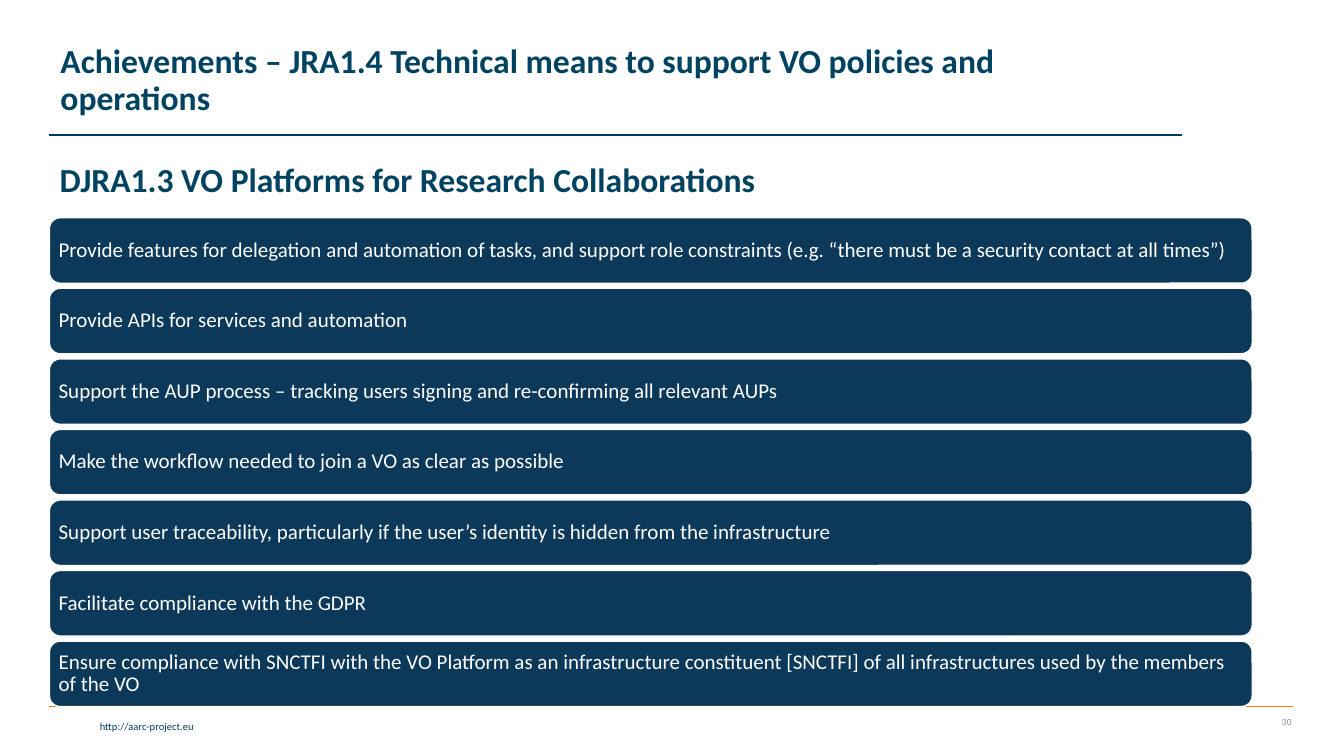
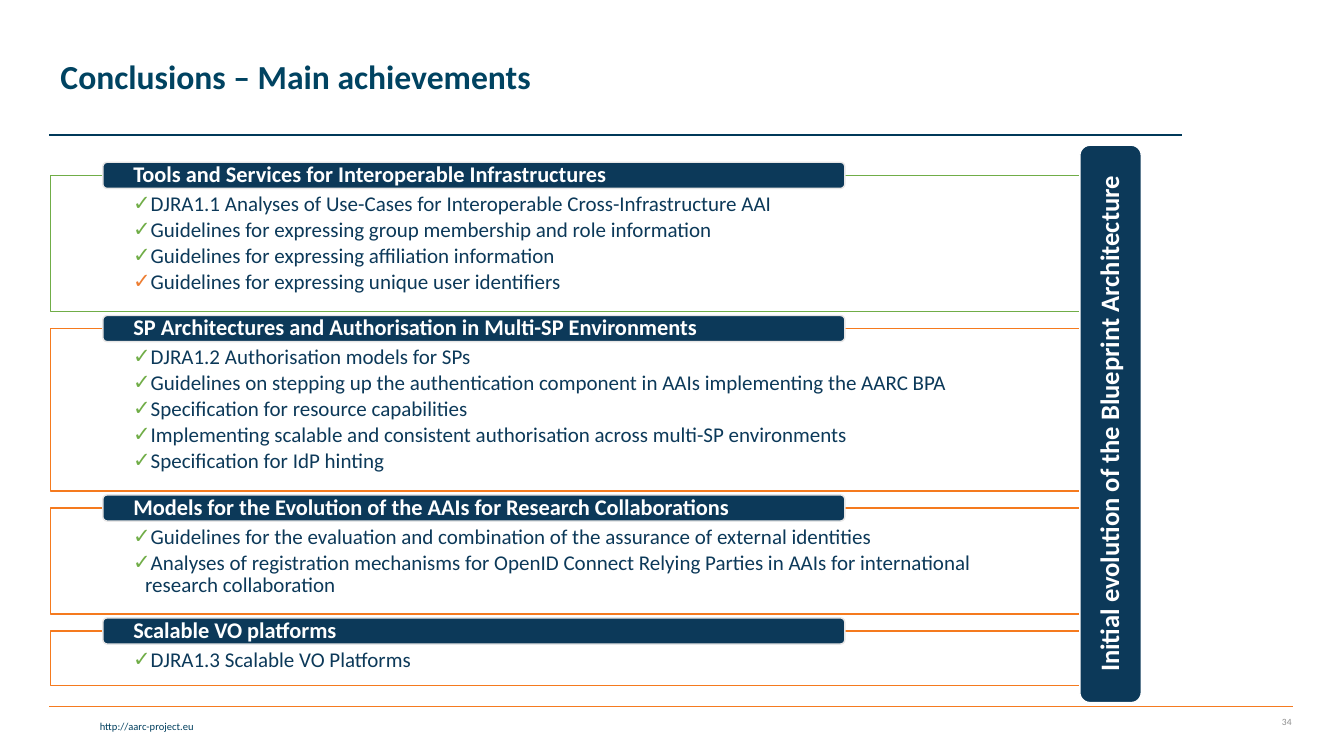
from lxml.etree import SubElement
from pptx import Presentation
from pptx.dml.color import RGBColor
from pptx.enum.shapes import MSO_CONNECTOR, MSO_SHAPE
from pptx.enum.text import MSO_ANCHOR, MSO_AUTO_SIZE, PP_ALIGN
from pptx.oxml.ns import qn
from pptx.util import Emu, Pt

EMU_PER_PX = 9144
FONT = "Calibri"
NAVY, TITLE_BLUE, RULE_BLUE, LINK_BLUE = "0C3959", "004361", "003959", "003F5E"
ORANGE, RULE_ORANGE, CHECK_ORANGE, GREEN = "F57A1E", "F57B20", "ED7D31", "70AD47"
WHITE, PALE_GREY, GREY = "FFFFFF", "E7E6E6", "8C8C8C"
CONTENT_LAYOUT, COMPARISON_LAYOUT = 1, 4


def px(length):
    return Emu(length * EMU_PER_PX)


def color(hex_string):
    return RGBColor.from_string(hex_string)


def set_bullet(paragraph, bullet_color=None, left=0):
    """Give the paragraph a hanging check mark, or no bullet without a colour."""
    properties = paragraph._p.get_or_add_pPr()
    properties.set("marL", str(px(left)))
    properties.set("indent", str(px(-left)))
    if bullet_color is None:
        SubElement(properties, qn("a:buNone"))
        return
    bullet_fill = SubElement(properties, qn("a:buClr"))
    SubElement(bullet_fill, qn("a:srgbClr")).set("val", bullet_color)
    SubElement(properties, qn("a:buChar")).set("char", "✓")


class Deck:
    def __init__(self):
        self.presentation = Presentation()
        self.presentation.slide_width = px(1333)
        self.presentation.slide_height = px(750)
        self.slide = None

    def new_slide(self, layout_index, title, title_top, page_number):
        """Start a slide with its title, rules, web address and page number."""
        layout = self.presentation.slide_layouts[layout_index]
        self.slide = self.presentation.slides.add_slide(layout)
        self.rule(49, 1282, 701, RULE_ORANGE)
        self.rule(49, 1172, 134, RULE_BLUE)
        self.label("http://aarc-project.eu", (3, 709, 199, 23), 7.5, LINK_BLUE)
        self.label(page_number, (1210, 701, 81, 30), 6.8, GREY, MSO_ANCHOR.MIDDLE)
        placeholder = self.slide.shapes.title
        self.place(placeholder, (50, title_top, 1051, 145))
        self.frame(placeholder, MSO_ANCHOR.MIDDLE).text = title
        self.format(placeholder, 24, TITLE_BLUE, bold=True)

    def place(self, shape, box):
        shape.left, shape.top, shape.width, shape.height = map(px, box)

    def frame(self, shape, anchor, insets=(10, 5, 10, 5)):
        """Set up and return the text frame; insets are left, top, right, bottom."""
        text_frame = shape.text_frame
        text_frame.word_wrap = True
        text_frame.auto_size = MSO_AUTO_SIZE.NONE
        text_frame.vertical_anchor = anchor
        (text_frame.margin_left, text_frame.margin_top,
         text_frame.margin_right, text_frame.margin_bottom) = map(px, insets)
        return text_frame

    def format(self, shape, size, text_color, bold=False, align=PP_ALIGN.LEFT,
               line_spacing=0.9, space_after=0):
        for paragraph in shape.text_frame.paragraphs:
            paragraph.alignment = align
            paragraph.line_spacing = line_spacing
            paragraph.space_before = Pt(0)
            paragraph.space_after = Pt(space_after)
            for run in paragraph.runs:
                run.font.name = FONT
                run.font.size = Pt(size)
                run.font.bold = bold
                run.font.color.rgb = color(text_color)

    def rule(self, left, right, top, line_color):
        connector = self.slide.shapes.add_connector(
            MSO_CONNECTOR.STRAIGHT, px(left), px(top), px(right), px(top))
        connector.line.color.rgb = color(line_color)
        connector.line.width = Pt(1)
        SubElement(connector._element.spPr, qn("a:effectLst"))

    def label(self, text, box, size, text_color, anchor=MSO_ANCHOR.TOP):
        text_box = self.slide.shapes.add_textbox(*map(px, box))
        self.frame(text_box, anchor).text = text
        self.format(text_box, size, text_color, align=PP_ALIGN.RIGHT, line_spacing=1.0)

    def subtitle(self, text, box):
        placeholder = self.slide.placeholders[1]
        self.place(placeholder, box)
        text_frame = self.frame(placeholder, MSO_ANCHOR.TOP)
        text_frame.text = text
        set_bullet(text_frame.paragraphs[0])
        self.format(placeholder, 24, TITLE_BLUE, bold=True)

    def bar(self, text, box, size, insets, line_color=WHITE, bold=False,
            align=PP_ALIGN.LEFT, rotation=0):
        shape = self.slide.shapes.add_shape(MSO_SHAPE.ROUNDED_RECTANGLE, *map(px, box))
        shape.shadow.inherit = False
        shape.rotation = rotation
        shape.fill.solid()
        shape.fill.fore_color.rgb = color(NAVY)
        shape.line.color.rgb = color(line_color)
        shape.line.width = Pt(1)
        self.frame(shape, MSO_ANCHOR.MIDDLE, insets).text = text
        self.format(shape, size, WHITE, bold, align)

    def checklist(self, placeholder, items, box, line_color):
        """Fill a framed placeholder with (text, check mark colour) items."""
        self.place(placeholder, box)
        placeholder.line.color.rgb = color(line_color)
        placeholder.line.width = Pt(1)
        text_frame = self.frame(placeholder, MSO_ANCHOR.TOP, (82, 18, 82, 12))
        text_frame.text = "\n".join(text for text, _ in items)
        for paragraph, (_, check_color) in zip(text_frame.paragraphs, items):
            set_bullet(paragraph, check_color, left=12)
        self.format(placeholder, 15, NAVY, space_after=2.25)


REQUIREMENTS = [
    "Provide features for delegation and automation of tasks, and support role constraints "
    "(e.g. “there must be a security contact at all times”)",
    "Provide APIs for services and automation",
    "Support the AUP process – tracking users signing and re-confirming all relevant AUPs",
    "Make the workflow needed to join a VO as clear as possible",
    "Support user traceability, particularly if the user’s identity is hidden from the "
    "infrastructure",
    "Facilitate compliance with the GDPR",
    "Ensure compliance with SNCTFI with the VO Platform as an infrastructure constituent "
    "[SNCTFI] of all infrastructures used by the members of the VO",
]

# Heading, frame colour, frame height, items with check mark colours
ACHIEVEMENTS = [
    ("Tools and Services for Interoperable Infrastructures", GREEN, 135, [
        ("DJRA1.1 Analyses of Use-Cases for Interoperable Cross-Infrastructure AAI", GREEN),
        ("Guidelines for expressing group membership and role information", GREEN),
        ("Guidelines for expressing affiliation information", GREEN),
        ("Guidelines for expressing unique user identifiers", CHECK_ORANGE),
    ]),
    ("SP Architectures and Authorisation in Multi-SP Environments", ORANGE, 161, [
        ("DJRA1.2 Authorisation models for SPs", GREEN),
        ("Guidelines on stepping up the authentication component in AAIs implementing "
         "the AARC BPA", GREEN),
        ("Specification for resource capabilities", GREEN),
        ("Implementing scalable and consistent authorisation across multi-SP environments",
         GREEN),
        ("Specification for IdP hinting", GREEN),
    ]),
    ("Models for the Evolution of the AAIs for Research Collaborations", ORANGE, 105, [
        ("Guidelines for the evaluation and combination of the assurance of external "
         "identities", GREEN),
        ("Analyses of registration mechanisms for OpenID Connect Relying Parties in AAIs "
         "for international research collaboration", GREEN),
    ]),
    ("Scalable VO platforms", ORANGE, 54, [("DJRA1.3 Scalable VO Platforms", GREEN)]),
]


def add_requirements_slide(deck):
    deck.new_slide(CONTENT_LAYOUT, "Achievements – JRA1.4 Technical means to support VO "
                   "policies and operations", 8, "30")
    deck.subtitle("DJRA1.3 VO Platforms for Research Collaborations", (49, 157, 1193, 57))
    for index, requirement in enumerate(REQUIREMENTS):
        deck.bar(requirement, (49, 216 + 70 * index, 1193, 65), 15, (6, 6, 6, 6))


def add_conclusions_slide(deck):
    deck.new_slide(COMPARISON_LAYOUT, "Conclusions – Main achievements", 5, "34")
    top, gap = 174, 17
    for index, (heading, line_color, height, items) in enumerate(ACHIEVEMENTS, start=1):
        deck.checklist(deck.slide.placeholders[index], items,
                       (50, top, 1051, height), line_color)
        deck.bar(heading, (102, top - 13, 736, 26), 16, (29, 0, 29, 0), PALE_GREY, bold=True)
        top += height + gap
    deck.bar("Initial evolution of the Blueprint Architecture", (825, 390, 553, 61), 19,
             (8, 8, 8, 8), bold=True, align=PP_ALIGN.CENTER, rotation=270)


def main():
    deck = Deck()
    add_requirements_slide(deck)
    add_conclusions_slide(deck)
    deck.presentation.save("out.pptx")


if __name__ == "__main__":
    main()
